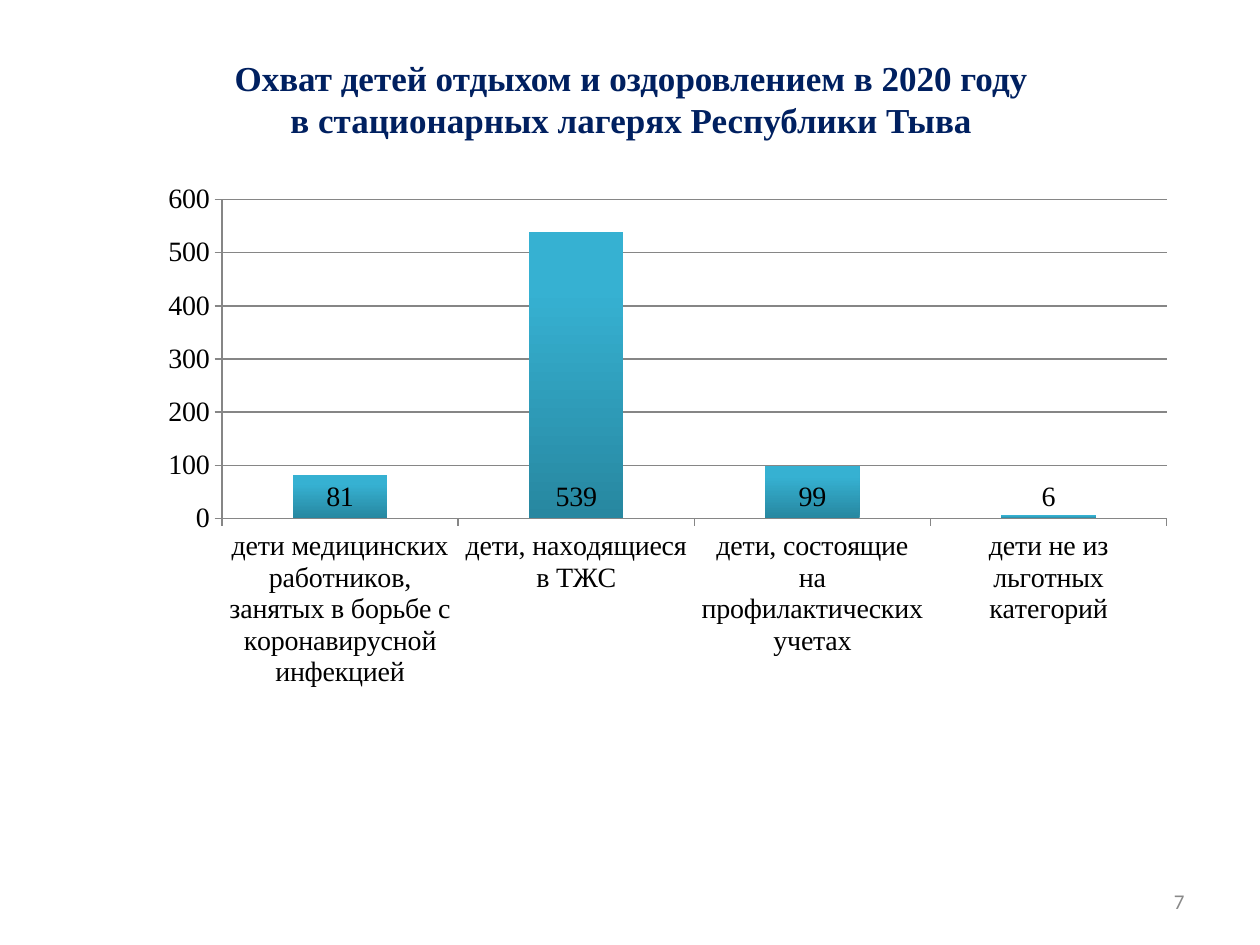
"""Build a slide with a column chart of children's camp coverage in Tyva in 2020."""
from lxml import etree
from pptx import Presentation
from pptx.chart.data import CategoryChartData
from pptx.dml.color import RGBColor
from pptx.enum.chart import XL_CHART_TYPE, XL_LABEL_POSITION, XL_TICK_MARK
from pptx.enum.text import MSO_ANCHOR, PP_ALIGN
from pptx.oxml.ns import qn
from pptx.util import Inches, Pt

STACKED = XL_CHART_TYPE.COLUMN_STACKED
INSIDE_BASE = XL_LABEL_POSITION.INSIDE_BASE
TICK_OUTSIDE = XL_TICK_MARK.OUTSIDE
MIDDLE = MSO_ANCHOR.MIDDLE
CENTER, RIGHT = PP_ALIGN.CENTER, PP_ALIGN.RIGHT

TITLE = "Охват детей отдыхом и оздоровлением в 2020 году\vв стационарных лагерях Республики Тыва"
PAGE_NUMBER = "7"
COVERAGE = [
    ("дети медицинских работников, занятых в борьбе с коронавирусной инфекцией", 81),
    ("дети, находящиеся в ТЖС", 539),
    ("дети, состоящие на профилактических учетах", 99),
    ("дети не из льготных категорий", 6),
]
COLORS = {
    "title": "002060",
    "number": "898989",
    "text": "000000",
    "grid": "868686",
    "bar_bottom": "2787A0",
    "bar_top": "36B1D2",
}
GRADIENT = [(0, "bar_bottom"), (0.8, "bar_top")]
PLOT_AREA = {"x": 0.1, "y": 0.05, "w": 0.88, "h": 0.46}
SERIF, SANS = "Times New Roman", "Calibri"


def color(name):
    return RGBColor.from_string(COLORS[name])


def set_font(font, name, size, color_name, bold=False):
    font.name, font.size, font.bold = name, Pt(size), bold
    font.color.rgb = color(color_name)


def add_text(page, text, place, align, *font):
    box = page.shapes.add_textbox(*map(Inches, place))
    frame = box.text_frame
    frame.word_wrap = True
    frame.vertical_anchor = MIDDLE
    para = frame.paragraphs[0]
    para.text = text
    para.alignment = align
    set_font(para.font, *font)


def set_plot_area(chart):
    plot_area = chart._chartSpace.chart.plotArea
    for old in plot_area.findall(qn("c:layout")):
        plot_area.remove(old)
    layout = etree.Element(qn("c:layout"))
    manual = etree.SubElement(layout, qn("c:manualLayout"))
    settings = {"layoutTarget": "inner", "xMode": "edge", "yMode": "edge", **PLOT_AREA}
    for tag, value in settings.items():
        etree.SubElement(manual, qn(f"c:{tag}")).set("val", str(value))
    plot_area.insert(0, layout)


def style_line(line):
    line.color.rgb = color("grid")
    line.width = Pt(0.75)


def add_coverage_chart(page):
    data = CategoryChartData()
    data.categories = [group for group, _ in COVERAGE]
    data.add_series("Охват детей", [count for _, count in COVERAGE])
    place = map(Inches, (0.91, 1.31, 8.52, 5.5))
    chart = page.shapes.add_chart(STACKED, *place, data).chart
    chart.has_legend = chart.has_title = False
    set_font(chart.font, SERIF, 16, "text")
    set_plot_area(chart)

    for axis in (chart.category_axis, chart.value_axis):
        axis.major_tick_mark = TICK_OUTSIDE
        style_line(axis.format.line)
    values = chart.value_axis
    values.minimum_scale, values.maximum_scale, values.major_unit = 0, 600, 100
    style_line(values.major_gridlines.format.line)

    plot = chart.plots[0]
    plot.gap_width, plot.overlap = 150, 100
    plot.vary_by_categories = False
    plot.has_data_labels = True
    labels = plot.data_labels
    labels.show_value = True
    labels.position = INSIDE_BASE
    set_font(labels.font, SERIF, 16, "text")

    fill = plot.series[0].format.fill
    fill.gradient()
    fill.gradient_angle = 90
    for stop, (position, name) in zip(fill.gradient_stops, GRADIENT):
        stop.position = position
        stop.color.rgb = color(name)


def main():
    deck = Presentation()
    deck.slide_width, deck.slide_height = Inches(10), Inches(7.5)
    page = deck.slides.add_slide(deck.slide_layouts[6])
    add_text(page, TITLE, (0.51, 0.44, 9, 0.68), CENTER, SERIF, 20, "title", True)
    add_text(page, PAGE_NUMBER, (7.17, 6.95, 2.33, 0.4), RIGHT, SANS, 12, "number")
    add_coverage_chart(page)
    deck.save("out.pptx")


if __name__ == "__main__":
    main()
